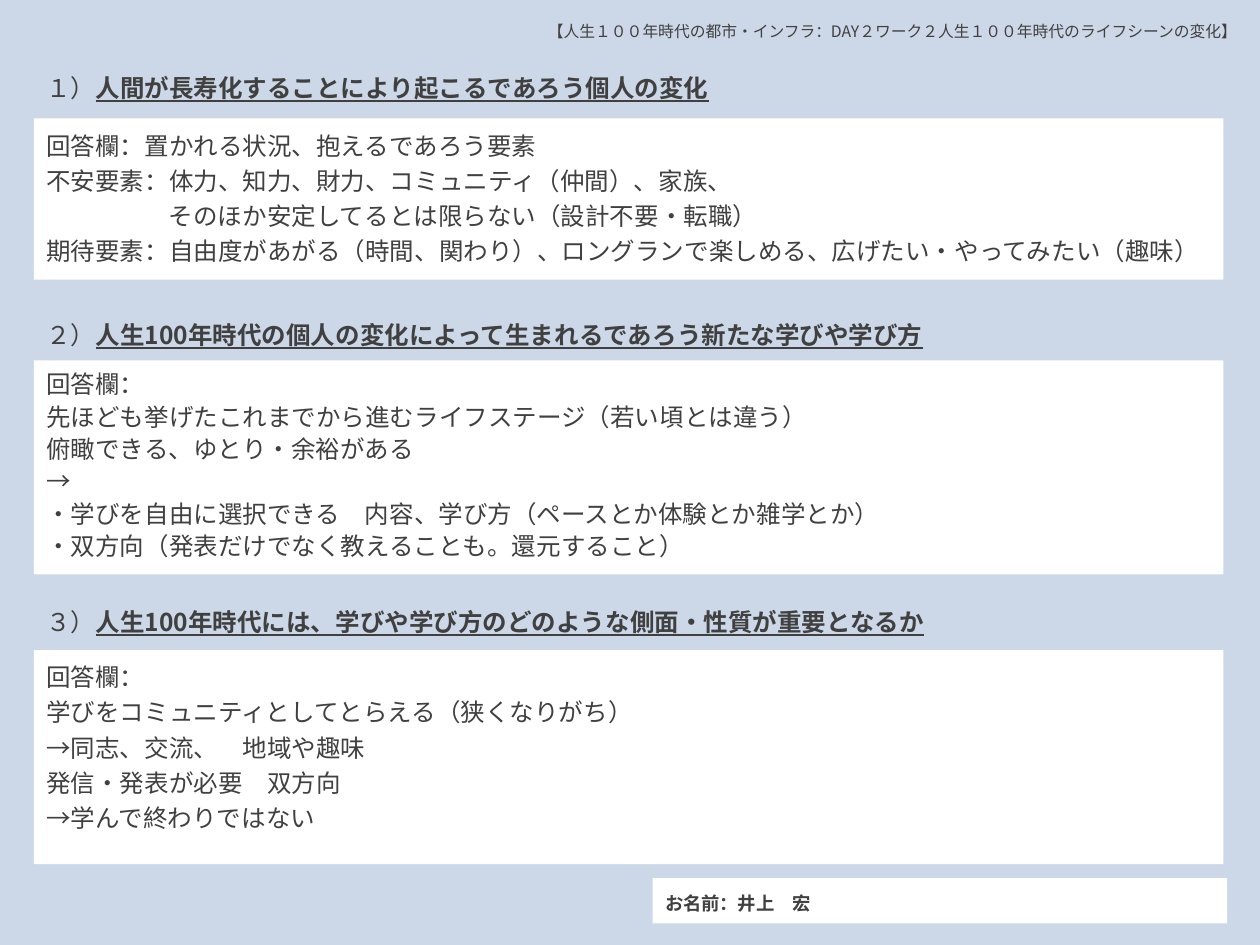
from pptx import Presentation
from pptx.dml.color import RGBColor
from pptx.enum.shapes import MSO_SHAPE
from pptx.enum.text import MSO_ANCHOR, PP_ALIGN
from pptx.oxml.ns import qn
from pptx.util import Inches, Pt

RECT = MSO_SHAPE.RECTANGLE
TOP, MIDDLE = MSO_ANCHOR.TOP, MSO_ANCHOR.MIDDLE
LEFT = PP_ALIGN.LEFT

FONT = "Noto Sans CJK JP"
BACKGROUND, WHITE, INK = "CCD8E7", "FFFFFF", "404040"
BODY_SIZE = 14
HANGING = 5 * BODY_SIZE / 72  # five full-width characters, in inches

# Content
HEADER = "【人生１００年時代の都市・インフラ：DAY２ワーク２人生１００年時代のライフシーンの変化】"
NAME = "お名前：井上　宏"
SECTIONS = [
    dict(number="１）", title="人間が長寿化することにより起こるであろう個人の変化",
         title_top=0.48, title_width=5.6, top=0.94, height=1.28, spacing=1.2,
         answer=[
             ("回答欄：置かれる状況、抱えるであろう要素", 0),
             ("不安要素：体力、知力、財力、コミュニティ（仲間）、家族、", 0),
             ("そのほか安定してるとは限らない（設計不要・転職）", HANGING),
             ("期待要素：自由度があがる（時間、関わり）、ロングランで楽しめる、"
              "広げたい・やってみたい（趣味）", 0),
         ]),
    dict(number="２）",
         title="人生100年時代の個人の変化によって生まれるであろう新たな学びや学び方",
         title_top=2.44, title_width=8.38, top=2.86, height=1.7, spacing=1.1,
         answer=[
             ("回答欄：", 0),
             ("先ほども挙げたこれまでから進むライフステージ（若い頃とは違う）", 0),
             ("俯瞰できる、ゆとり・余裕がある", 0),
             ("→", 0),
             ("・学びを自由に選択できる　内容、学び方（ペースとか体験とか雑学とか）", 0),
             ("・双方向（発表だけでなく教えることも。還元すること）", 0),
         ]),
    dict(number="３）",
         title="人生100年時代には、学びや学び方のどのような側面・性質が重要となるか",
         title_top=4.72, title_width=8.38, top=5.16, height=1.7, spacing=1.2,
         answer=[
             ("回答欄：", 0),
             ("学びをコミュニティとしてとらえる（狭くなりがち）", 0),
             ("→同志、交流、　地域や趣味", 0),
             ("発信・発表が必要　双方向", 0),
             ("→学んで終わりではない", 0),
         ]),
]


def rgb(value):
    return RGBColor.from_string(value)


def add_run(p, text, size=BODY_SIZE, bold=False, underline=False):
    r = p.add_run()
    r.text = text
    font = r.font
    font.name, font.size = FONT, Pt(size)
    font.bold, font.underline = bold, underline
    font.color.rgb = rgb(INK)
    ea = r._r.get_or_add_rPr().makeelement(qn("a:ea"), {"typeface": FONT})
    r._r.rPr.find(qn("a:latin")).addnext(ea)


def add_paragraph(tf, first, spacing=1.2, indent=0):
    p = tf.paragraphs[0] if first else tf.add_paragraph()
    p.alignment, p.line_spacing = LEFT, spacing
    if indent:
        p._p.get_or_add_pPr().set("marL", str(Inches(indent)))
    return p


def add_label(s, x, y, w, h):
    tf = s.shapes.add_textbox(Inches(x), Inches(y), Inches(w), Inches(h)).text_frame
    tf.word_wrap = True
    return add_paragraph(tf, True)


def add_panel(s, x, y, w, h, anchor=TOP):
    sp = s.shapes.add_shape(RECT, Inches(x), Inches(y), Inches(w), Inches(h))
    sp.shadow.inherit = False
    sp.fill.solid()
    sp.fill.fore_color.rgb = rgb(WHITE)
    sp.line.fill.background()
    tf = sp.text_frame
    tf.word_wrap, tf.vertical_anchor = True, anchor
    return tf


prs = Presentation()
prs.slide_width, prs.slide_height = Inches(10), Inches(7.5)
s = prs.slides.add_slide(prs.slide_layouts[6])
s.background.fill.solid()
s.background.fill.fore_color.rgb = rgb(BACKGROUND)

# Header line
add_run(add_label(s, 4.25, 0.09, 5.75, 0.36), HEADER, 9)

# Questions and their answer panels
for section in SECTIONS:
    p = add_label(s, 0.27, section["title_top"], section["title_width"], 0.45)
    add_run(p, section["number"])
    add_run(p, section["title"], bold=True, underline=True)
    tf = add_panel(s, 0.27, section["top"], 9.44, section["height"])
    for i, (text, indent) in enumerate(section["answer"]):
        add_run(add_paragraph(tf, i == 0, section["spacing"], indent), text)

# Name field
tf = add_panel(s, 5.18, 6.97, 4.56, 0.36, MIDDLE)
add_run(add_paragraph(tf, True), NAME, 10.5, bold=True)

prs.save("out.pptx")
